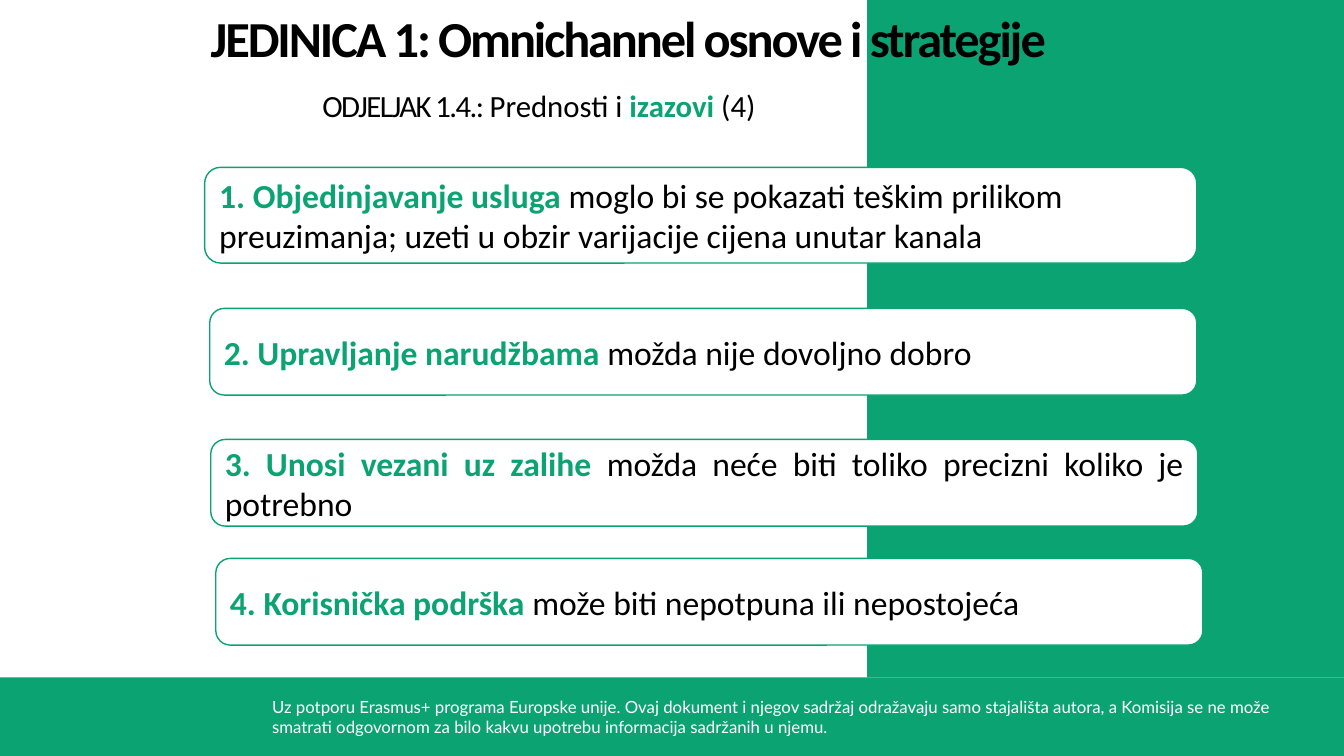
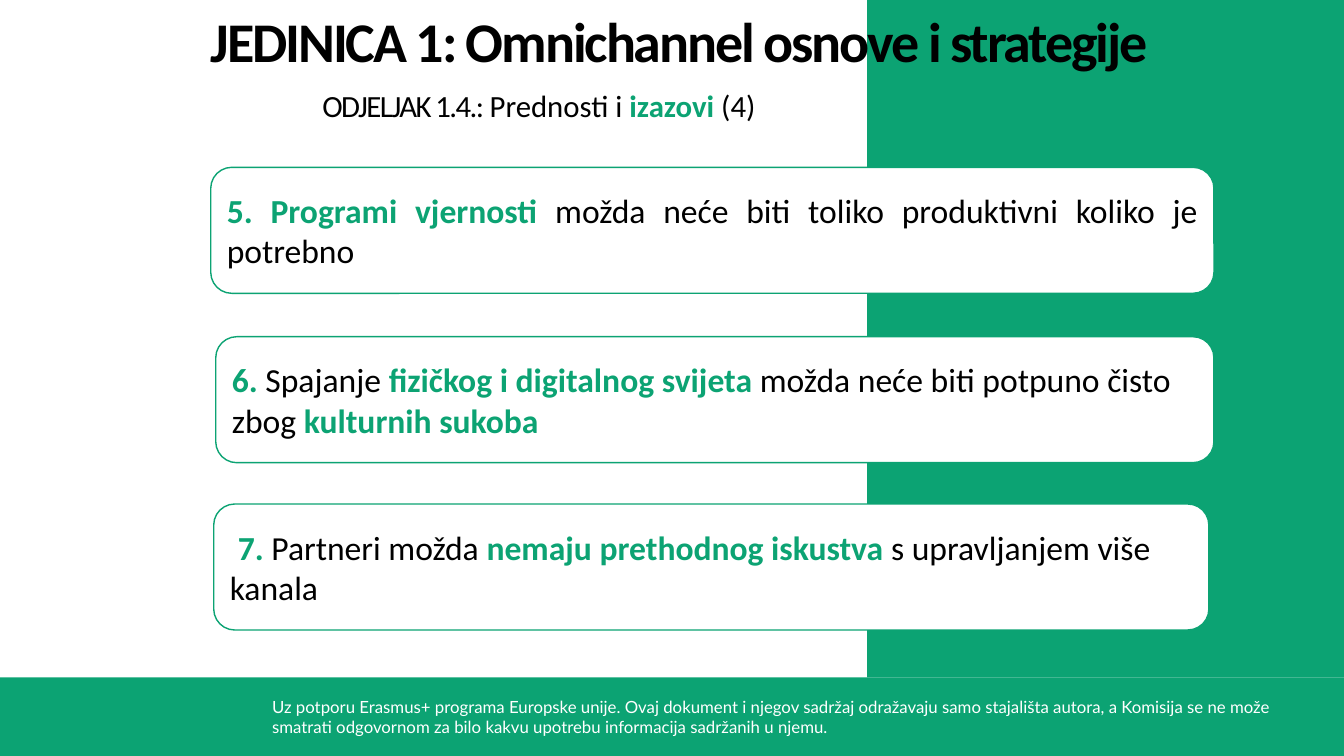
from dataclasses import dataclass

from pptx import Presentation
from pptx.dml.color import RGBColor
from pptx.enum.shapes import MSO_SHAPE as Shape
from pptx.enum.text import MSO_ANCHOR as Anchor, MSO_AUTO_SIZE as AutoSize, PP_ALIGN as Align
from pptx.util import Inches, Pt

GREEN = RGBColor(0x0C, 0xA3, 0x73)
BLACK = RGBColor(0x00, 0x00, 0x00)
WHITE = RGBColor(0xFF, 0xFF, 0xFF)
TEXT_FONT = "Calibri"
FOOTER_FONT = "Lato"

SLIDE_WIDTH, SLIDE_HEIGHT = 13.33, 7.5
BAND_TOP = 6.72
PANEL_LEFT = 8.6

UNIT = "JEDINICA 1: Omnichannel osnove i strategije"
DISCLAIMER = (
    "Uz potporu Erasmus+ programa Europske unije. Ovaj dokument i njegov sadržaj "
    "odražavaju samo stajališta autora, a Komisija se ne može smatrati odgovornom "
    "za bilo kakvu upotrebu informacija sadržanih u njemu."
)


@dataclass
class Challenge:
    left: float
    top: float
    width: float
    phrases: list
    height: float = 0.86
    align: Align = Align.JUSTIFY
    indent: float = 0


@dataclass
class Page:
    title_size: int
    challenges: list


PAGES = [
    Page(36, [
        Challenge(2.03, 1.66, 9.84, [
            ("1. Objedinjavanje usluga ", True),
            ("moglo bi se pokazati teškim prilikom preuzimanja; "
             "uzeti u obzir varijacije cijena unutar kanala", False),
        ], height=0.95, align=Align.LEFT),
        Challenge(2.08, 3.06, 9.79, [
            ("2. Upravljanje narudžbama ", True),
            ("možda nije dovoljno dobro", False),
        ]),
        Challenge(2.09, 4.36, 9.79, [
            ("3. Unosi vezani uz zalihe ", True),
            ("možda neće biti toliko precizni koliko je potrebno", False),
        ]),
        Challenge(2.14, 5.54, 9.79, [
            ("4. Korisnička podrška ", True),
            ("može biti nepotpuna ili nepostojeća", False),
        ]),
    ]),
    Page(40, [
        Challenge(2.09, 1.66, 9.95, [
            ("5. Programi vjernosti ", True),
            ("možda neće biti toliko produktivni koliko je potrebno", False),
        ], height=1.25),
        Challenge(2.14, 3.34, 9.9, [
            ("6. ", True),
            ("Spajanje ", False),
            ("fizičkog i digitalnog svijeta ", True),
            ("možda neće biti potpuno čisto zbog ", False),
            ("kulturnih sukoba", True),
        ], height=1.25, align=Align.LEFT),
        Challenge(2.12, 5, 9.87, [
            ("7. ", True),
            ("Partneri možda ", False),
            ("nemaju prethodnog iskustva ", True),
            ("s upravljanjem više kanala", False),
        ], height=1.25, align=Align.LEFT, indent=0.08),
    ]),
]


def add_run(paragraph, text, size, color=BLACK, bold=False, font=TEXT_FONT, spacing=0):
    run = paragraph.add_run()
    run.text = text
    run.font.name = font
    run.font.size = Pt(size)
    run.font.bold = bold
    run.font.color.rgb = color
    if spacing:
        run._r.get_or_add_rPr().set("spc", str(round(spacing * 100)))


def place(shape, left, top, width, height):
    shape.left, shape.top = Inches(left), Inches(top)
    shape.width, shape.height = Inches(width), Inches(height)


def open_heading(placeholder, box, align, top_inset):
    place(placeholder, *box)
    frame = placeholder.text_frame
    frame.auto_size = AutoSize.NONE
    frame.word_wrap = True
    frame.vertical_anchor = Anchor.TOP
    frame.margin_left = frame.margin_right = frame.margin_bottom = 0
    frame.margin_top = Inches(top_inset)
    paragraph = frame.paragraphs[0]
    paragraph.alignment = align
    paragraph.space_before = Pt(0)
    return paragraph


def add_block(slide, kind, box, fill, outline=None):
    block = slide.shapes.add_shape(kind, *map(Inches, box))
    block.shadow.inherit = False
    block.fill.solid()
    block.fill.fore_color.rgb = fill
    if outline is None:
        block.line.fill.background()
    else:
        block.line.color.rgb = outline
        block.line.width = Pt(1)
    return block


def add_footer_text(slide):
    footer = slide.shapes.add_textbox(*map(Inches, (2.6, 6.86, 10.42, 0.5)))
    footer.text_frame.word_wrap = True
    add_run(footer.text_frame.paragraphs[0], DISCLAIMER, 12, WHITE, font=FOOTER_FONT)
    return footer


def dress_layout(layout, slide):
    band_height = SLIDE_HEIGHT - BAND_TOP
    panel_width = SLIDE_WIDTH - PANEL_LEFT
    backdrop = [
        add_block(slide, Shape.RECTANGLE, (0, BAND_TOP, SLIDE_WIDTH, band_height), GREEN),
        add_block(slide, Shape.RECTANGLE, (PANEL_LEFT, 0, panel_width, BAND_TOP), GREEN),
        add_footer_text(slide),
    ]
    for item in backdrop:
        layout.shapes.element.append(item.element)


def add_headings(slide, title_size):
    title = open_heading(slide.shapes.title, (2.09, 0.13, 9.52, 0.6), Align.LEFT, 0.01)
    title.line_spacing = 0.9
    add_run(title, UNIT, title_size, bold=True, spacing=-1.5)

    section = open_heading(slide.placeholders[1], (1.55, 0.84, 7.59, 0.39), Align.CENTER, 0.02)
    add_run(section, "ODJELJAK 1.4.: ", 22, spacing=-1.1)
    add_run(section, "Prednosti i ", 22)
    add_run(section, "izazovi ", 22, GREEN, bold=True)
    add_run(section, "(4)", 22)


def add_challenge(slide, challenge):
    box = (challenge.left, challenge.top, challenge.width, challenge.height)
    card = add_block(slide, Shape.ROUNDED_RECTANGLE, box, WHITE, GREEN)
    frame = card.text_frame
    frame.word_wrap = True
    frame.vertical_anchor = Anchor.MIDDLE
    paragraph = frame.paragraphs[0]
    paragraph.alignment = challenge.align
    if challenge.indent:
        paragraph._p.get_or_add_pPr().set("indent", str(Inches(challenge.indent)))
    for text, accented in challenge.phrases:
        add_run(paragraph, text, 24, GREEN if accented else BLACK, accented)


def main():
    deck = Presentation()
    deck.slide_width, deck.slide_height = Inches(SLIDE_WIDTH), Inches(SLIDE_HEIGHT)
    layout = deck.slide_layouts[0]
    slides = [deck.slides.add_slide(layout) for _ in PAGES]
    dress_layout(layout, slides[0])
    for slide, page in zip(slides, PAGES):
        add_headings(slide, page.title_size)
        for challenge in page.challenges:
            add_challenge(slide, challenge)
    deck.save("out.pptx")


if __name__ == "__main__":
    main()
